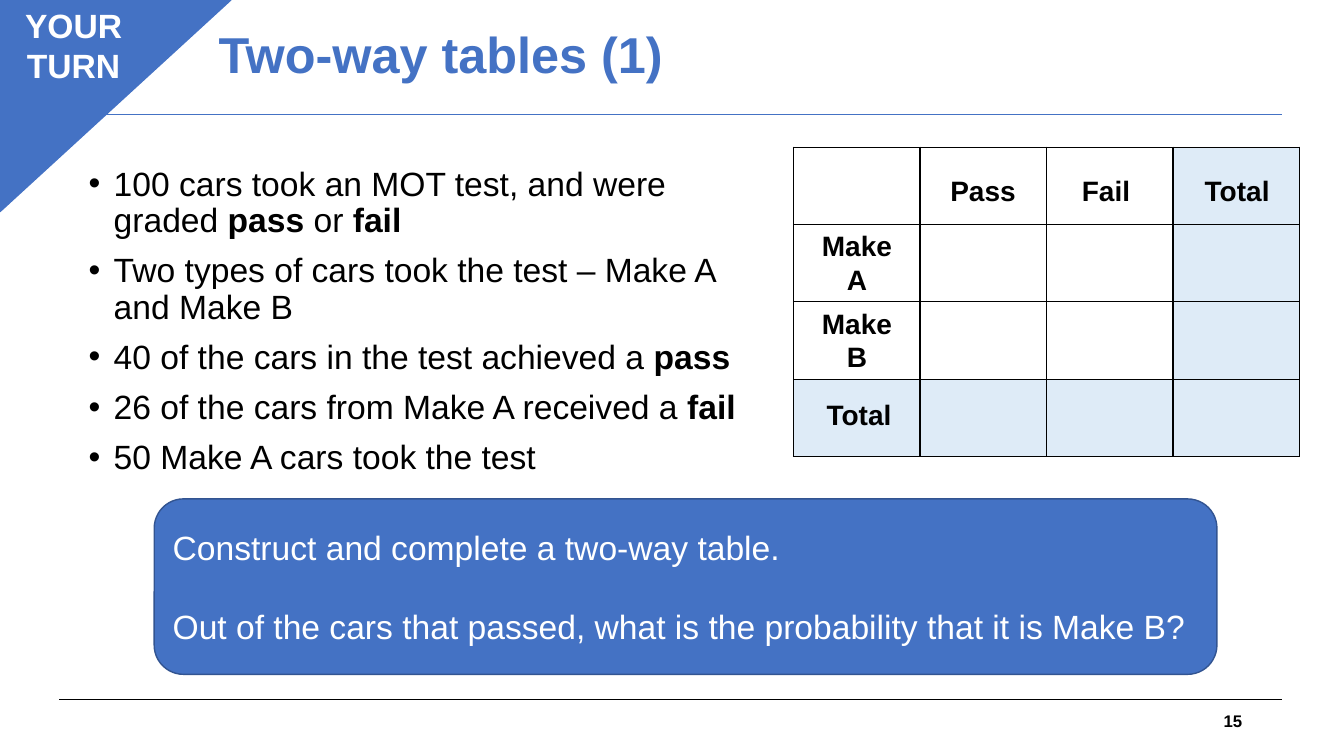
from lxml.etree import SubElement
from pptx import Presentation
from pptx.dml.color import RGBColor
from pptx.enum.shapes import MSO_CONNECTOR, MSO_SHAPE
from pptx.enum.text import MSO_ANCHOR, PP_ALIGN
from pptx.oxml.ns import qn
from pptx.util import Inches, Pt

BLUE = RGBColor(0x44, 0x72, 0xC4)
DARK_BLUE = RGBColor(0x32, 0x54, 0x91)
PALE_BLUE = RGBColor(0xDE, 0xEB, 0xF7)
BLACK = RGBColor(0, 0, 0)
WHITE = RGBColor(255, 255, 255)

# Each fact is a list of (wording, bold) pieces
FACTS = [
    [("100 cars took an MOT test, and were graded ", False), ("pass", True),
     (" or ", False), ("fail", True)],
    [("Two types of cars took the test – Make A and Make B", False)],
    [("40 of the cars in the test achieved a ", False), ("pass", True)],
    [("26 of the cars from Make A received a ", False), ("fail", True)],
    [("50 Make A cars took the test", False)],
]
QUESTIONS = [
    "Construct and complete a two-way table.",
    "Out of the cars that passed, what is the probability that it is Make B?",
]
# Table labels: wording, left, top, width, height, alignment
LABELS = [
    ("Total", 8.1, 3.89, 1.04, 0.44, PP_ALIGN.LEFT),
    ("Total", 11.85, 1.67, 1.04, 0.44, PP_ALIGN.LEFT),
    ("Pass", 9.14, 1.67, 1.22, 0.44, PP_ALIGN.CENTER),
    ("Fail", 10.36, 1.67, 1.22, 0.44, PP_ALIGN.CENTER),
    ("Make B", 7.98, 2.99, 1.04, 0.77, PP_ALIGN.CENTER),
    ("Make A", 7.98, 2.22, 1.04, 0.77, PP_ALIGN.CENTER),
]
GRID_SIZE = 4


def style_font(font, size, color, bold=False):
    font.name = "Arial"
    font.size = Pt(size)
    font.bold = bold
    font.color.rgb = color


def add_rule(slide, y, color):
    rule = slide.shapes.add_connector(
        MSO_CONNECTOR.STRAIGHT, Inches(0.59), Inches(y), Inches(12.72), Inches(y))
    rule.line.color.rgb = color
    rule.line.width = Pt(0.75)
    SubElement(rule._element.spPr, qn("a:effectLst"))


def add_frame(slide, left, top, width, height, anchor=MSO_ANCHOR.TOP):
    frame = slide.shapes.add_textbox(
        Inches(left), Inches(top), Inches(width), Inches(height)).text_frame
    frame.word_wrap = True
    frame.vertical_anchor = anchor
    return frame


def add_label(slide, wording, left, top, width, height, align,
              size=20, color=BLACK, anchor=MSO_ANCHOR.TOP):
    frame = add_frame(slide, left, top, width, height, anchor)
    frame.text = wording
    label = frame.paragraphs[0]
    label.alignment = align
    style_font(label.runs[0].font, size, color, bold=True)
    return label


def add_panel(slide, preset, left, top, width, height, line_color):
    panel = slide.shapes.add_shape(
        preset, Inches(left), Inches(top), Inches(width), Inches(height))
    panel.shadow.inherit = False
    panel.fill.solid()
    panel.fill.fore_color.rgb = BLUE
    panel.line.color.rgb = line_color
    panel.line.width = Pt(1)
    return panel


def add_facts(slide):
    frame = add_frame(slide, 0.78, 1.61, 6.77, 3.07)
    for index, pieces in enumerate(FACTS):
        fact = frame.add_paragraph() if index else frame.paragraphs[0]
        fact.line_spacing = 0.9
        fact.space_before = Pt(10)
        props = fact._p.get_or_add_pPr()
        props.set("marL", str(Inches(0.25)))
        props.set("indent", str(Inches(-0.25)))
        SubElement(props, qn("a:buFont")).set("typeface", "Arial")
        SubElement(props, qn("a:buChar")).set("char", "•")
        for wording, bold in pieces:
            run = fact.add_run()
            run.text = wording
            style_font(run.font, 24, BLACK, bold)


def add_cell_borders(cell):
    props = cell._tc.get_or_add_tcPr()
    for position, side in enumerate(("lnL", "lnR", "lnT", "lnB")):
        border = props.makeelement(qn(f"a:{side}"), {"w": str(Pt(1))})
        fill = SubElement(border, qn("a:solidFill"))
        SubElement(fill, qn("a:srgbClr")).set("val", str(BLACK))
        props.insert(position, border)


def add_two_way_table(slide):
    table = slide.shapes.add_table(
        GRID_SIZE, GRID_SIZE, Inches(7.87), Inches(1.46),
        Inches(5.02), Inches(3.07)).table
    table.first_row = False
    table.horz_banding = False
    for row in range(GRID_SIZE):
        for column in range(GRID_SIZE):
            cell = table.cell(row, column)
            # The last row and column hold the totals
            if GRID_SIZE - 1 in (row, column):
                cell.fill.solid()
                cell.fill.fore_color.rgb = PALE_BLUE
            else:
                cell.fill.background()
            add_cell_borders(cell)


def add_questions(slide):
    panel = add_panel(slide, MSO_SHAPE.ROUNDED_RECTANGLE,
                      1.53, 4.95, 10.54, 1.74, DARK_BLUE)
    frame = panel.text_frame
    frame.word_wrap = True
    frame.vertical_anchor = MSO_ANCHOR.MIDDLE
    frame.text = "\n".join(QUESTIONS)
    for question in frame.paragraphs:
        question.alignment = PP_ALIGN.LEFT
        style_font(question.runs[0].font, 24, WHITE)
    frame.paragraphs[1].space_before = Pt(28)


def main():
    deck = Presentation()
    deck.slide_width = Inches(13.33)
    deck.slide_height = Inches(7.5)
    slide = deck.slides.add_slide(deck.slide_layouts[6])

    # Rules and title
    add_rule(slide, 6.94, BLACK)
    add_rule(slide, 1.14, BLUE)
    title = add_label(slide, "Two-way tables (1)", 2.07, 0.11, 10.34, 0.92,
                      PP_ALIGN.LEFT, 36, BLUE, MSO_ANCHOR.MIDDLE)
    title.line_spacing = 0.9

    # Corner flag
    corner = add_panel(slide, MSO_SHAPE.ISOSCELES_TRIANGLE, 0, 0, 2.29, 2.1, BLUE)
    corner.adjustments[0] = 0
    corner._element.spPr.xfrm.set("flipV", "1")
    add_label(slide, "YOUR TURN", -0.2, 0, 1.86, 0.91, PP_ALIGN.CENTER, 24, WHITE)

    # Facts, table and questions
    add_facts(slide)
    add_two_way_table(slide)
    add_questions(slide)
    for label in LABELS:
        add_label(slide, *label)

    # Slide number
    add_label(slide, "15", 9.42, 6.95, 3, 0.4, PP_ALIGN.RIGHT, 12,
              anchor=MSO_ANCHOR.MIDDLE)

    deck.save("out.pptx")


if __name__ == "__main__":
    main()
